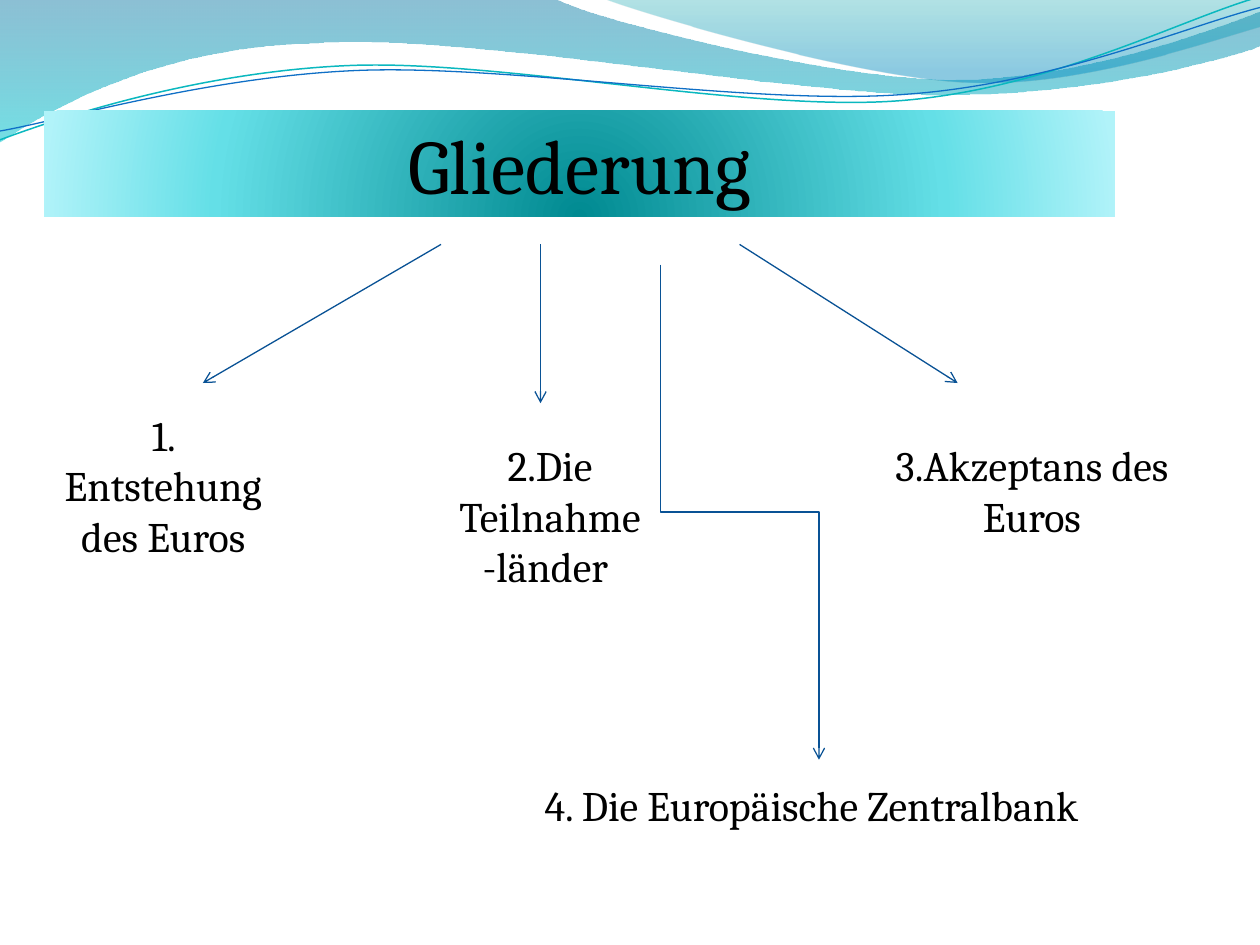
import math
from dataclasses import dataclass

from lxml import etree
from pptx import Presentation
from pptx.dml.color import RGBColor
from pptx.enum import shapes, text
from pptx.oxml.ns import qn
from pptx.util import Inches, Pt


@dataclass(frozen=True)
class Theme:
    font: str = "Cambria"
    title_size: int = 44
    topic_size: int = 24
    ink: str = "000000"
    arrow: str = "095295"
    arrow_width: float = 0.75
    # Gradient stops: position, colour, opacity in percent
    banner: tuple = ((0, "008A91", 100), (68, "64DFE7", 100), (100, "B1F3F9", 100))
    wide_wave: tuple = ((0, "0074A1", 45), (100, "00C6CF", 55))
    right_wave: tuple = ((0, "00A1A9", 30), (80, "008BBF", 45))
    teal_curve: str = "0AB8BF"
    blue_curve: str = "0F6FC6"
    curve_angle: float = 357.3


def write(frame, content, size, theme, align=text.PP_ALIGN.CENTER):
    """Put one formatted paragraph into a text frame."""
    frame.word_wrap = True
    frame.auto_size = text.MSO_AUTO_SIZE.SHAPE_TO_FIT_TEXT
    paragraph = frame.paragraphs[0]
    paragraph.alignment = align
    run = paragraph.add_run()
    run.text = content
    run.font.name = theme.font
    run.font.size = Pt(size)
    run.font.color.rgb = RGBColor.from_string(theme.ink)


def gradient(shape, stops, circle=None):
    """Fill with a vertical gradient, or a round one towards the circle rectangle."""
    shape.fill.solid()
    solid = shape.element.spPr.find(qn("a:solidFill"))
    grad = etree.Element(qn("a:gradFill"), rotWithShape="1")
    stop_list = etree.SubElement(grad, qn("a:gsLst"))
    for position, color, opacity in stops:
        stop = etree.SubElement(stop_list, qn("a:gs"), pos=str(position * 1000))
        rgb = etree.SubElement(stop, qn("a:srgbClr"), val=color)
        if opacity < 100:
            etree.SubElement(rgb, qn("a:alpha"), val=str(opacity * 1000))
    if circle:
        round_fill = etree.SubElement(grad, qn("a:path"), {"path": "circle"})
        sides = {side: str(value * 1000) for side, value in zip("ltrb", circle)}
        etree.SubElement(round_fill, qn("a:fillToRect"), sides)
    else:
        etree.SubElement(grad, qn("a:lin"), ang="5400000", scaled="1")
    solid.getparent().replace(solid, grad)


def turn(point, center, degrees):
    """Rotate a point clockwise around a center."""
    angle = math.radians(degrees)
    x, y = (value - middle for value, middle in zip(point, center))
    return (center[0] + x * math.cos(angle) - y * math.sin(angle),
            center[1] + x * math.sin(angle) + y * math.cos(angle))


class SlideBuilder:
    def __init__(self, slide, theme):
        self.slide = slide
        self.theme = theme

    def outline(self, start, segments, closed):
        """Master shape of segments with one end point or three Bezier points."""
        corners = [(Inches(x), Inches(y)) for segment in segments for x, y in segment]
        builder = self.slide.shapes.build_freeform(*map(Inches, start))
        builder.add_line_segments(corners, close=closed)
        shape = builder.convert_to_shape()
        shape.shadow.inherit = False
        # Join each three points of a Bezier segment into one curve
        lines = iter(list(shape.element.iter(qn("a:lnTo"))))
        for segment in segments:
            parts = [next(lines) for _ in segment]
            if len(parts) == 3:
                bend = etree.Element(qn("a:cubicBezTo"))
                parts[0].addprevious(bend)
                for part in parts:
                    bend.append(part[0])
                    part.getparent().remove(part)
        self.slide.slide_layout.slide_master.shapes.element.append(shape.element)
        return shape

    def wave(self, stops, start, *segments):
        shape = self.outline(start, segments, True)
        gradient(shape, stops)
        shape.line.fill.background()

    def curve(self, color, width, center, start, *segments):
        """Open curve, laid level and then tilted around its center."""
        angle = self.theme.curve_angle
        level = [[turn(point, center, -angle) for point in segment] for segment in segments]
        shape = self.outline(turn(start, center, -angle), level, False)
        shape.rotation = angle
        shape.fill.background()
        shape.line.color.rgb = RGBColor.from_string(color)
        shape.line.width = Pt(width)

    def title(self, content, left, top, width, height):
        banner = self.slide.shapes.title
        banner.left, banner.top = Inches(left), Inches(top)
        banner.width, banner.height = Inches(width), Inches(height)
        gradient(banner, self.theme.banner, circle=(50, 130, 50, -30))
        write(banner.text_frame, content, self.theme.title_size, self.theme)

    def topic(self, content, left, top, width, height):
        box = self.slide.shapes.add_textbox(*map(Inches, (left, top, width, height)))
        write(box.text_frame, content, self.theme.topic_size, self.theme)

    def arrow(self, start, end, kind=shapes.MSO_CONNECTOR.STRAIGHT):
        connector = self.slide.shapes.add_connector(kind, *map(Inches, (*start, *end)))
        connector.line.color.rgb = RGBColor.from_string(self.theme.arrow)
        connector.line.width = Pt(self.theme.arrow_width)
        properties = connector.element.spPr
        etree.SubElement(properties.find(qn("a:ln")), qn("a:tailEnd"), type="arrow")
        etree.SubElement(properties, qn("a:effectLst"))
        return connector

    def drop_arrow(self, start, end):
        """Elbow arrow that leaves and arrives vertically: a quarter turn of a mirrored one."""
        middle_x, middle_y = ((a + b) / 2 for a, b in zip(start, end))
        half_run, half_drop = ((b - a) / 2 for a, b in zip(start, end))
        connector = self.arrow((middle_x + half_drop, middle_y - half_run),
                               (middle_x - half_drop, middle_y + half_run),
                               shapes.MSO_CONNECTOR.ELBOW)
        connector.element.spPr.find(qn("a:xfrm")).set("rot", str(270 * 60000))


def main():
    deck = Presentation()
    deck.slide_width, deck.slide_height = Inches(10), Inches(7.5)
    theme = Theme()
    page = SlideBuilder(deck.slides.add_slide(deck.slide_layouts[5]), theme)

    # Waves along the top edge, on the master
    page.wave(theme.wide_wave, (0, 0), [(4.4, -0.01)],
              [(4.76, 0.17), (6.64, 0.63), (7.58, 0.63)],
              [(8.53, 0.63), (9.58, 0.26), (10, 0.09)], [(10.01, 0.36)],
              [(9.83, 0.44), (8.7, 0.76), (7.46, 0.75)],
              [(6.22, 0.75), (3.82, 0.28), (2.57, 0.34)],
              [(1.29, 0.36), (0.46, 0.83), (-0.01, 1.13)], [(0, 0)])
    page.wave(theme.right_wave, (4.79, -0.01),
              [(5.09, 0.11), (6.82, 0.62), (7.69, 0.65)],
              [(8.56, 0.69), (9.61, 0.32), (10, 0.21)], [(10, 0)], [(4.79, -0.01)])
    page.curve(theme.teal_curve, 0.85, (4.99, 0.57), (0, 1.11),
               [(0.48, 0.93), (1.58, 0.57), (2.77, 0.52)],
               [(3.95, 0.47), (5.93, 0.89), (7.13, 0.8)],
               [(8.33, 0.71), (9.38, 0.15), (9.98, -0.02)])
    page.curve(theme.blue_curve, 0.75, (5, 0.59), (0, 1.04),
               [(0.47, 0.96), (1.64, 0.61), (2.83, 0.56)],
               [(4.03, 0.51), (5.97, 0.84), (7.17, 0.75)],
               [(8.36, 0.67), (9.41, 0.21), (10, 0.06)])

    # Title banner
    page.title("Gliederung", 0.35, 0.88, 8.5, 0.84)

    # Branches: an arrow and the topic it leads to
    for draw, start, end, content, place in (
            (page.arrow, (3.5, 1.94), (1.61, 3.04),
             "1. Entstehung des Euros", (0.35, 3.2, 1.89, 1.31)),
            (page.arrow, (4.29, 1.94), (4.29, 3.2),
             "2.Die Teilnahme-länder ", (3.5, 3.44, 1.73, 1.31)),
            (page.arrow, (5.87, 1.94), (7.6, 3.04),
             "3.Akzeptans des Euros", (6.89, 3.44, 2.6, 0.91)),
            (page.drop_arrow, (5.24, 2.1), (6.5, 6.03),
             "4. Die Europäische Zentralbank", (4.02, 6.14, 4.84, 0.5))):
        draw(start, end)
        page.topic(content, *place)

    deck.save("out.pptx")


if __name__ == "__main__":
    main()
